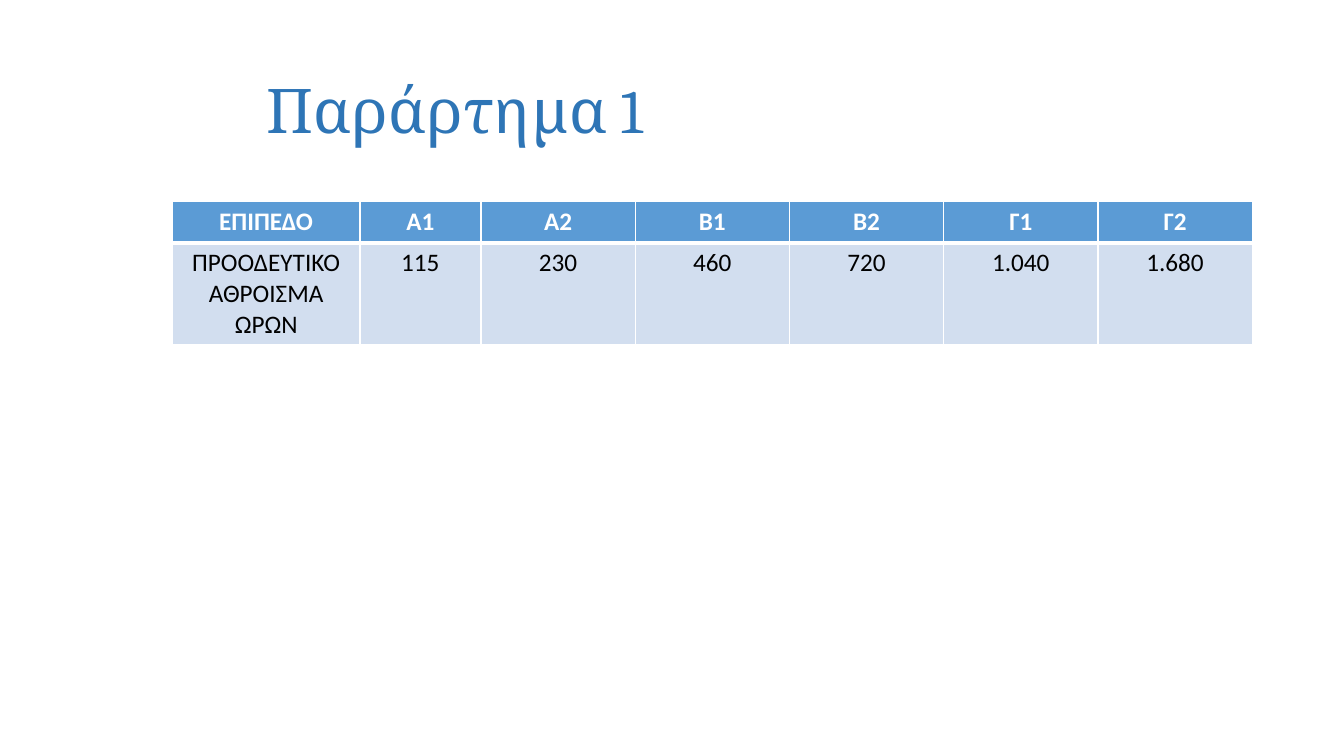
import pptx
import pptx.util
from lxml import etree
from pptx.dml.color import RGBColor
from pptx.enum.text import MSO_ANCHOR, PP_ALIGN
from pptx.oxml.ns import qn
from pptx.util import Inches, Pt

TITLE = "Παράρτημα 1"
ROWS = [
    ["ΕΠΙΠΕΔΟ", "Α1", "Α2", "Β1", "Β2", "Γ1", "Γ2"],
    ["ΠΡΟΟΔΕΥΤΙΚΟ ΑΘΡΟΙΣΜΑ ΩΡΩΝ", "115", "230", "460", "720", "1.040", "1.680"],
]
COL_WIDTHS = [1.86, 1.2] + [1.53] * 5
ROW_HEIGHTS = [0.41, 1.01]

TITLE_BLUE = RGBColor(0x2E, 0x75, 0xB6)
HEADER_BLUE = RGBColor(0x5B, 0x9B, 0xD5)
BODY_BLUE = RGBColor(0xD2, 0xDE, 0xEF)
WHITE = RGBColor(0xFF, 0xFF, 0xFF)
BLACK = RGBColor(0, 0, 0)


def add_run(p, text, font, size, color, bold=False):
    r = p.add_run()
    r.text = text
    r.font.name = font
    r.font.size = Pt(size)
    r.font.bold = bold
    r.font.color.rgb = color


def set_borders(cell, top, bottom):
    """Draw white borders, 1 pt at the sides; call before filling the cell."""
    tc_pr = cell._tc.get_or_add_tcPr()
    for side, width in (("L", 1), ("R", 1), ("T", top), ("B", bottom)):
        ln = etree.SubElement(tc_pr, qn("a:ln" + side), w=str(Pt(width)))
        fill = etree.SubElement(ln, qn("a:solidFill"))
        etree.SubElement(fill, qn("a:srgbClr"), val=str(WHITE))


def add_title(s):
    box = s.shapes.add_textbox(Inches(2.54), Inches(0.4), Inches(9.88), Inches(1.45))
    tf = box.text_frame
    tf.word_wrap = True
    tf.vertical_anchor = MSO_ANCHOR.MIDDLE
    p = tf.paragraphs[0]
    p.line_spacing = 0.9
    add_run(p, TITLE, "Cambria", 44, TITLE_BLUE)


def add_hours_table(s):
    table = s.shapes.add_table(
        len(ROWS), len(COL_WIDTHS), Inches(1.71), Inches(2),
        Inches(sum(COL_WIDTHS)), Inches(sum(ROW_HEIGHTS))).table
    for column, width in zip(table.columns, COL_WIDTHS):
        column.width = Inches(width)
    for i, (texts, height) in enumerate(zip(ROWS, ROW_HEIGHTS)):
        table.rows[i].height = Inches(height)
        header = i == 0
        for j, text in enumerate(texts):
            cell = table.cell(i, j)
            set_borders(cell, top=1 if header else 3, bottom=3 if header else 1)
            cell.fill.solid()
            cell.fill.fore_color.rgb = HEADER_BLUE if header else BODY_BLUE
            p = cell.text_frame.paragraphs[0]
            p.alignment = PP_ALIGN.CENTER
            add_run(p, text, "Calibri", 18, WHITE if header else BLACK, header)


prs = pptx.Presentation()
prs.slide_width, prs.slide_height = Inches(13.33), Inches(7.5)
s = prs.slides.add_slide(prs.slide_layouts[6])
add_title(s)
add_hours_table(s)
prs.save("out.pptx")
